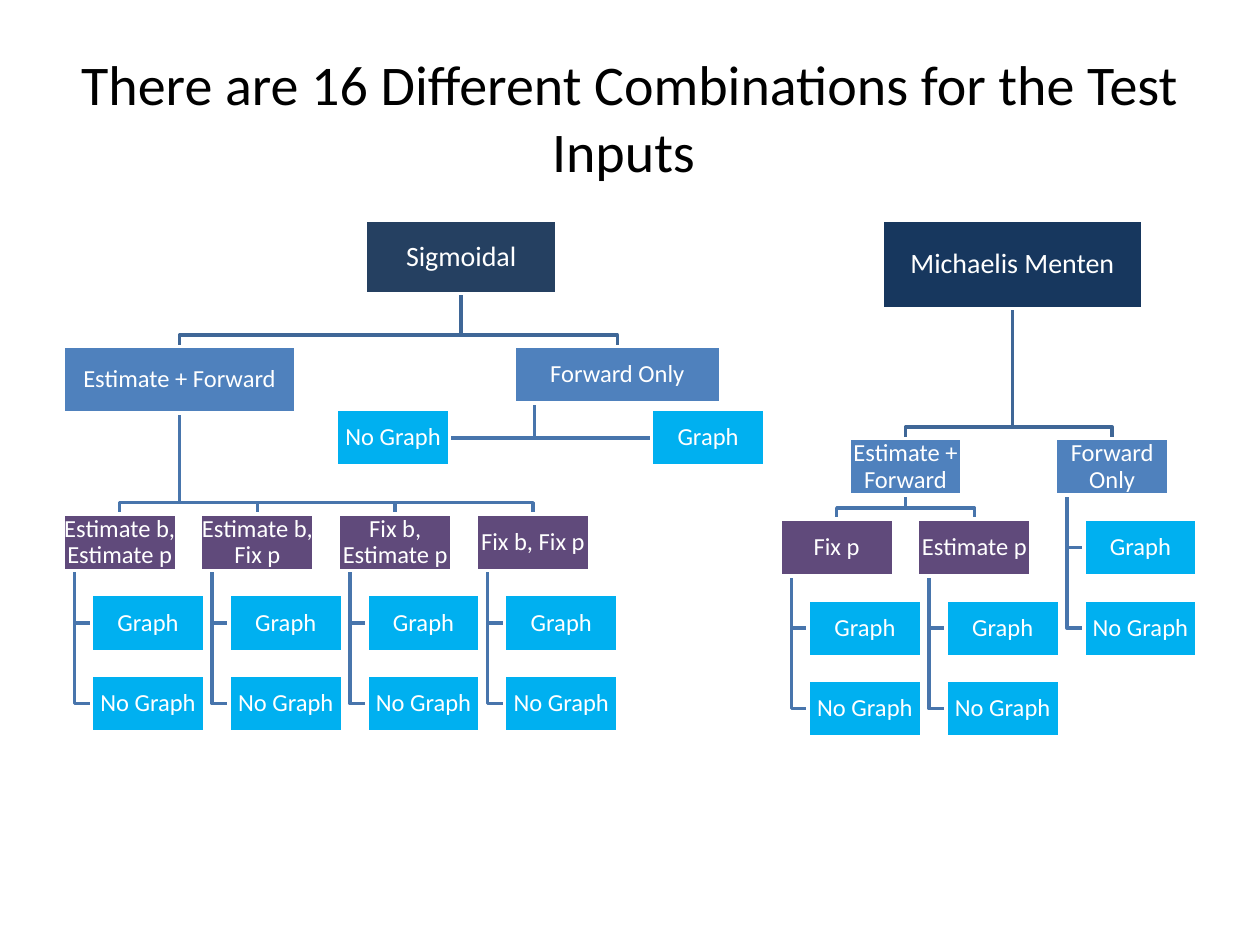
import dataclasses

import pptx
import pptx.dml.color
import pptx.enum.shapes
import pptx.enum.text
import pptx.util


@dataclasses.dataclass(frozen=True)
class Theme:
    font: str = "Calibri"
    title_size: int = 32
    root_size: int = 16
    node_size: int = 14
    line_width: int = 2
    ink: str = "000000"
    paper: str = "FFFFFF"
    sigmoidal: str = "254061"
    michaelis: str = "17375E"
    mode: str = "4F81BD"
    fit: str = "604A7B"
    leaf: str = "00B0F0"
    root_link: str = "3F6797"
    link: str = "4875AC"


@dataclasses.dataclass(frozen=True)
class Box:
    label: str
    role: str
    x: float
    y: float
    w: float = 0.9
    h: float = 0.45

    @property
    def is_root(self):
        return self.role in ("sigmoidal", "michaelis")

    @property
    def cx(self):
        return self.x + self.w / 2

    @property
    def cy(self):
        return self.y + self.h / 2

    @property
    def bottom(self):
        return self.y + self.h

    @property
    def stem(self):
        return self.x + self.w / 10


THEME = Theme()
COL, ROW = 3.28 / 3, 0.64
INDENT = 0.9 / 4
ELBOW = 0.09
INSET = 0
LEAVES = ("Graph", "No Graph")


def rgb(value):
    return pptx.dml.color.RGBColor.from_string(value)


def set_attributes(target, values):
    for name, value in values.items():
        setattr(target, name, value)


def write_text(sp, text, size, color, spacing=1.0, inset=None):
    tf = sp.text_frame
    values = {"word_wrap": True, "vertical_anchor": pptx.enum.text.MSO_ANCHOR.MIDDLE}
    if inset is not None:
        for side in ("left", "right", "top", "bottom"):
            values[f"margin_{side}"] = pptx.util.Inches(inset)
    set_attributes(tf, values)
    p = tf.paragraphs[0]
    set_attributes(p, {"alignment": pptx.enum.text.PP_ALIGN.CENTER, "line_spacing": spacing})
    r = p.add_run()
    r.text = text
    set_attributes(r.font, {"name": THEME.font, "size": pptx.util.Pt(size)})
    r.font.color.rgb = rgb(color)


def set_line(sp, color):
    sp.shadow.inherit = False
    sp.line.color.rgb = rgb(color)
    sp.line.width = pptx.util.Pt(THEME.line_width)


def add_title(s, text):
    sp = s.shapes.add_textbox(*map(pptx.util.Inches, (0.5, 0.3, 9, 1.25)))
    write_text(sp, text, THEME.title_size, THEME.ink)


def add_box(s, box):
    sp = s.shapes.add_shape(
        pptx.enum.shapes.MSO_SHAPE.RECTANGLE,
        *map(pptx.util.Inches, (box.x, box.y, box.w, box.h)))
    sp.fill.solid()
    sp.fill.fore_color.rgb = rgb(getattr(THEME, box.role))
    set_line(sp, THEME.paper)
    size = THEME.root_size if box.is_root else THEME.node_size
    write_text(sp, box.label, size, THEME.paper, 0.9, INSET)


def add_link(s, points, color):
    start, *rest = [tuple(map(pptx.util.Inches, point)) for point in points]
    builder = s.shapes.build_freeform(*start)
    builder.add_line_segments(rest, close=False)
    sp = builder.convert_to_shape()
    sp.fill.background()
    set_line(sp, color)


def branch_points(parent, child):
    turn = child.y - ELBOW
    return [(parent.cx, parent.bottom), (parent.cx, turn), (child.cx, turn), (child.cx, child.y)]


def hang_points(parent, child):
    edge = child.x if child.x > parent.stem else child.x + child.w
    return [(parent.stem, parent.bottom), (parent.stem, child.cy), (edge, child.cy)]


def hanging_leaves(parent):
    return [Box(label, "leaf", parent.x + INDENT, parent.y + i * ROW)
            for i, label in enumerate(LEAVES, 1)]


def sigmoidal_tree():
    root = Box("Sigmoidal", "sigmoidal", 2.9, 1.75, 1.52, 0.58)
    both = Box("Estimate + Forward", "mode", 0.5, 2.75, 1.85, 0.53)
    forward = Box("Forward Only", "mode", 4.08, 2.75, 1.64)
    labels = ("Estimate b, Estimate p", "Estimate b, Fix p", "Fix b, Estimate p", "Fix b, Fix p")
    fits = [Box(label, "fit", 0.5 + i * COL, 4.08) for i, label in enumerate(labels)]
    sides = [Box(label, "leaf", x, 3.25) for label, x in zip(LEAVES, (5.17, 2.67))]
    branches = [(root, [both, forward]), (both, fits)]
    hangs = [(forward, sides)] + [(fit, hanging_leaves(fit)) for fit in fits]
    return root, branches, hangs


def michaelis_tree():
    left, top = 6.19, 3.48
    root = Box("Michaelis Menten", "michaelis", 7, 1.75, 2.07, 0.7)
    both = Box("Estimate + Forward", "mode", left + COL / 2, top)
    forward = Box("Forward Only", "mode", left + 2 * COL, top)
    fits = [Box(label, "fit", left + i * COL, top + ROW)
            for i, label in enumerate(("Fix p", "Estimate p"))]
    branches = [(root, [both, forward]), (both, fits)]
    hangs = [(parent, hanging_leaves(parent)) for parent in [forward, *fits]]
    return root, branches, hangs


def add_tree(s, root, branches, hangs):
    boxes = [root]
    for groups, route in ((branches, branch_points), (hangs, hang_points)):
        for parent, children in groups:
            color = THEME.root_link if parent.is_root else THEME.link
            for child in children:
                add_link(s, route(parent, child), color)
            boxes.extend(children)
    for box in boxes:
        add_box(s, box)


def main():
    prs = pptx.Presentation()
    set_attributes(prs, {"slide_width": pptx.util.Inches(10),
                         "slide_height": pptx.util.Inches(7.5)})
    s = prs.slides.add_slide(prs.slide_layouts[6])
    add_title(s, "There are 16 Different Combinations for the Test Inputs ")
    for tree in (michaelis_tree(), sigmoidal_tree()):
        add_tree(s, *tree)
    prs.save("out.pptx")


if __name__ == "__main__":
    main()
